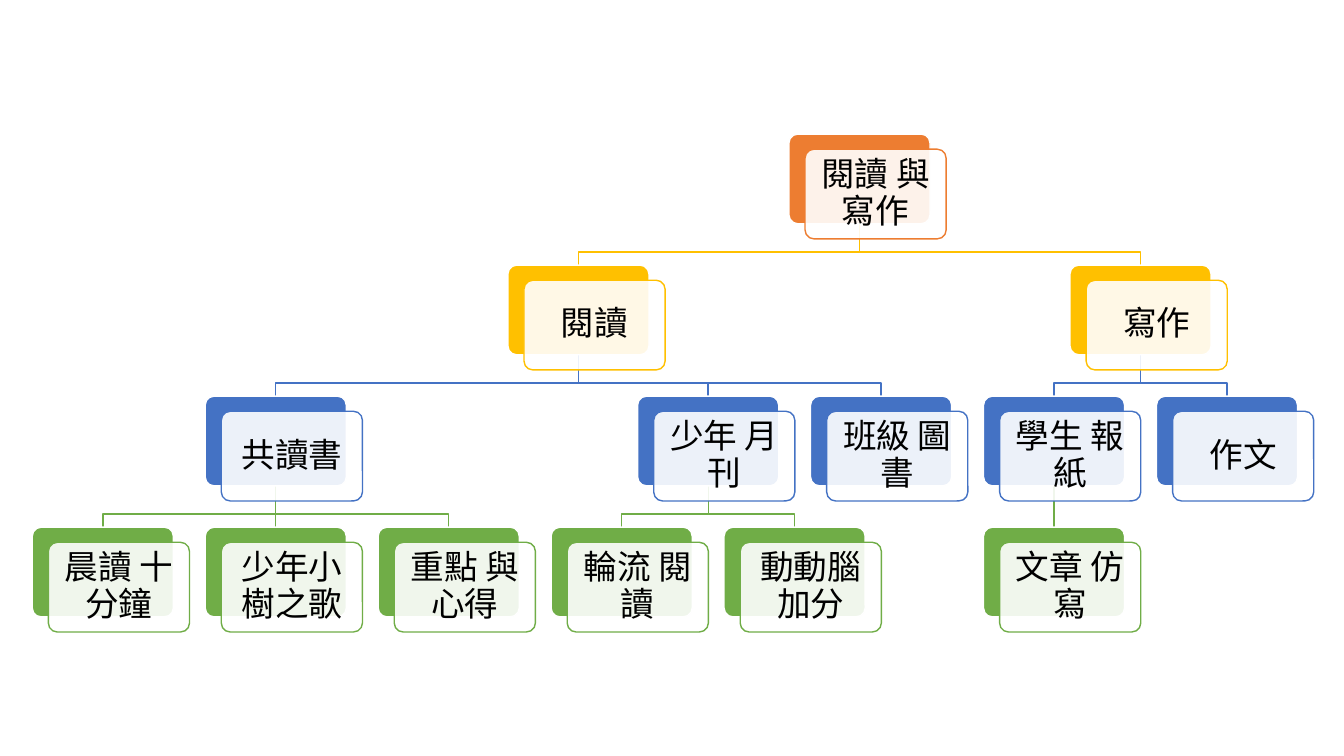
from lxml.etree import SubElement
from pptx import Presentation
from pptx.dml.color import RGBColor
from pptx.enum.shapes import MSO_CONNECTOR as CONNECTOR, MSO_SHAPE as SHAPE
from pptx.enum.text import MSO_ANCHOR as ANCHOR, PP_ALIGN as ALIGN
from pptx.oxml.ns import qn
from pptx.util import Inches, Pt

TOPICS = ("閱讀 與寫作", [
    ("閱讀", [
        ("共讀書", [("晨讀 十分鐘", []), ("少年小樹之歌", []), ("重點 與心得", [])]),
        ("少年 月刊", [("輪流 閱讀", []), ("動動腦加分", [])]),
        ("班級 圖書", []),
    ]),
    ("寫作", [
        ("學生 報紙", [("文章 仿寫", [])]),
        ("作文", []),
    ]),
])
COLORS = {"white": "FFFFFF", "text": "000000", "root": "ED7D31", "skill": "FFC000",
          "material": "4472C4", "activity": "70AD47"}
LEVELS = ["root", "skill", "material", "activity"]
FONT = "Noto Sans CJK SC"
SLIDE_W, SLIDE_H = 13.33, 7.5
CARD_W, CARD_H = 1.4, 0.89
OFFSET_X, OFFSET_Y = 0.16, 0.15
FIRST_X, LAST_X = 1.02, 12.17
PITCH = (LAST_X - FIRST_X) / 6.5
TOP, LEVEL_STEP, BEND = 1.33, 1.3, 0.28


def rgb(name):
    return RGBColor.from_string(COLORS[name])


def place(topic, level, earliest, free, cards, links):
    """Centre a topic over its subtopics, packing each level from the left."""
    label, subtopics = topic
    x = max(earliest, free[level])
    card = {"label": label, "level": level}
    if subtopics:
        start = x - (len(subtopics) - 1) / 2 * PITCH
        children = [place(sub, level + 1, start, free, cards, links) for sub in subtopics]
        x = (children[0]["x"] + children[-1]["x"]) / 2
        links.extend((card, child) for child in children)
    card.update(x=x, y=TOP + level * LEVEL_STEP)
    free[level] = x + PITCH
    cards.append(card)
    return card


def draw_link(shapes, parent, child):
    """Draw a straight or stepped line between two levels."""
    x1, y1 = Inches(parent["x"]), Inches(parent["y"] + CARD_H)
    x2, y2 = Inches(child["x"]), Inches(child["y"])
    straight = abs(parent["x"] - child["x"]) < 0.01
    if straight:
        link = shapes.add_connector(CONNECTOR.STRAIGHT, x1, y1, x2, y2)
        SubElement(link._element.spPr, qn("a:effectLst"))
    else:
        bend = y1 + Inches(BEND)
        outline = shapes.build_freeform(x1, y1)
        outline.add_line_segments([(x1, bend), (x2, bend), (x2, y2)], close=False)
        link = outline.convert_to_shape()
        link.fill.background()
        link.shadow.inherit = False
    link.line.color.rgb = rgb(LEVELS[child["level"]])
    link.line.width = Pt(1)
    return link if straight else None


def draw_panel(shapes, left, top, fill, line):
    """Draw one rounded panel of a card."""
    panel = shapes.add_shape(SHAPE.ROUNDED_RECTANGLE, Inches(left), Inches(top),
                             Inches(CARD_W), Inches(CARD_H))
    panel.adjustments[0] = 0.1
    panel.shadow.inherit = False
    panel.fill.solid()
    panel.fill.fore_color.rgb = rgb(fill)
    panel.line.color.rgb = rgb(line)
    panel.line.width = Pt(1)
    return panel


def draw_card(shapes, card):
    """Draw a coloured panel with a labelled translucent panel over it."""
    color = LEVELS[card["level"]]
    left, top = card["x"] - CARD_W / 2, card["y"]
    card["back"] = draw_panel(shapes, left, top, color, "white")
    front = draw_panel(shapes, left + OFFSET_X, top + OFFSET_Y, "white", color)
    white = front._element.spPr.find(qn("a:solidFill")).find(qn("a:srgbClr"))
    SubElement(white, qn("a:alpha"), val="90000")

    frame = front.text_frame
    frame.word_wrap = True
    frame.vertical_anchor = ANCHOR.MIDDLE
    frame.margin_left = frame.margin_right = Inches(0.1)
    frame.margin_top = frame.margin_bottom = Inches(0.1)
    paragraph = frame.paragraphs[0]
    paragraph.alignment = ALIGN.CENTER
    paragraph.line_spacing = 0.9
    run = paragraph.add_run()
    run.text = card["label"]
    run.font.size = Pt(24)
    run.font.name = FONT
    run.font.color.rgb = rgb("text")
    SubElement(run._r.get_or_add_rPr(), qn("a:ea"), typeface=FONT)


def main():
    """Build the reading and writing topic tree."""
    prs = Presentation()
    prs.slide_width, prs.slide_height = Inches(SLIDE_W), Inches(SLIDE_H)
    shapes = prs.slides.add_slide(prs.slide_layouts[6]).shapes
    cards, links = [], []
    place(TOPICS, 0, FIRST_X, [FIRST_X] * len(LEVELS), cards, links)
    drawn = [(draw_link(shapes, parent, child), parent, child) for parent, child in links]
    for card in cards:
        draw_card(shapes, card)
    for link, parent, child in drawn:
        if link:
            link.begin_connect(parent["back"], 2)
            link.end_connect(child["back"], 0)
    prs.save("out.pptx")


if __name__ == "__main__":
    main()
